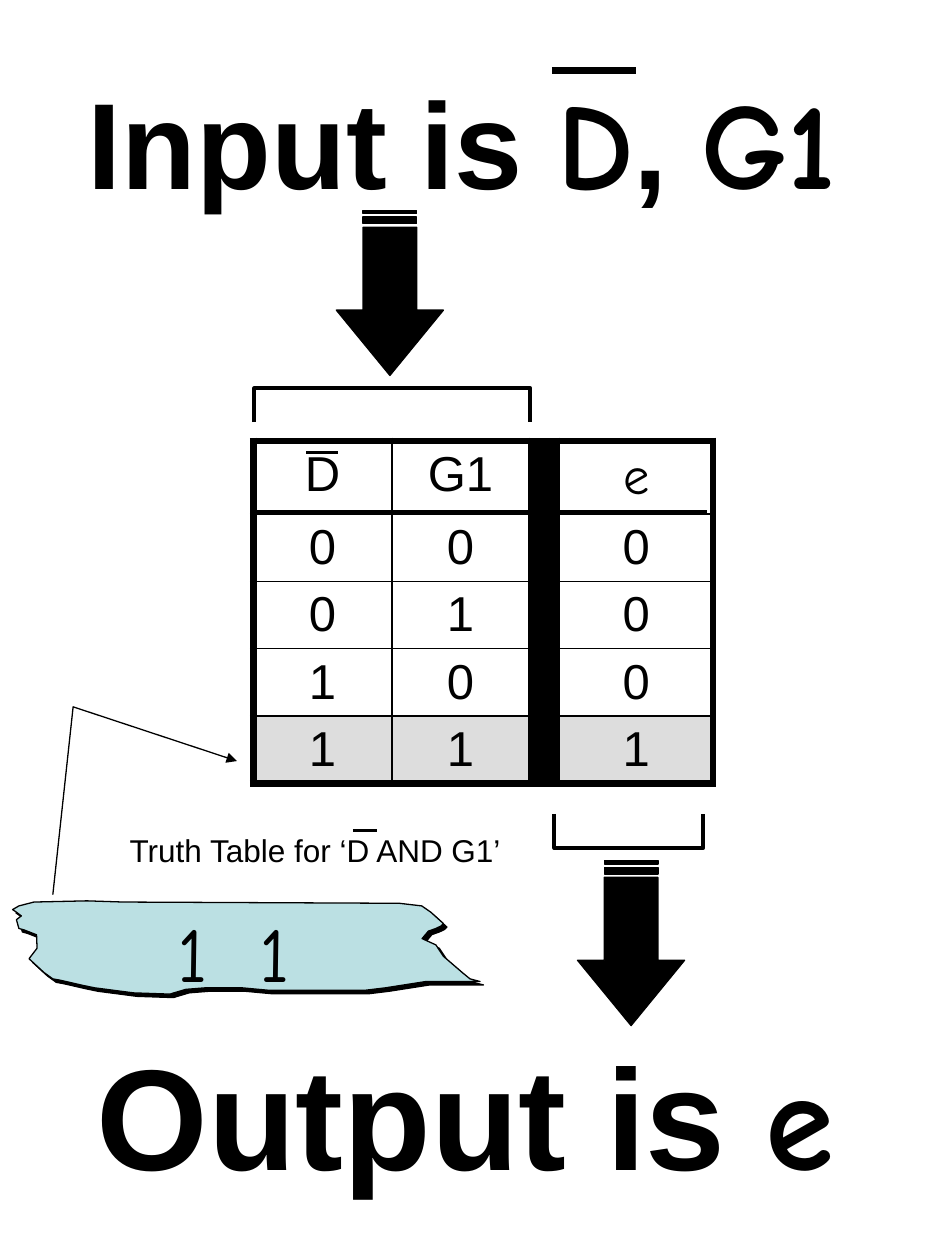
from lxml.etree import SubElement
from pptx import Presentation
from pptx.dml.color import RGBColor as Rgb
from pptx.enum.shapes import MSO_CONNECTOR as Link, MSO_SHAPE as Preset
from pptx.enum.text import MSO_AUTO_SIZE as Fit, PP_ALIGN as Align
from pptx.oxml.ns import qn
from pptx.util import Pt

COLORS = {"ink": "000000", "paper": "BBE0E3", "match": "DDDDDD"}
SANS, HAND = "Arial", "Comic Neue"

TRUTH_ROWS = [
    ("D", "G1", "", "e"),
    ("0", "0", "", "0"),
    ("0", "1", "", "0"),
    ("1", "0", "", "0"),
    ("1", "1", "", "1"),
]
TABLE_LEFT, TABLE_TOP = 144.7, 252
COLUMN_WIDTHS = (79.2, 78.5, 16.6, 87.8)
HEADER_HEIGHT, ROW_HEIGHT = 41.7, 38.5
DIVIDER = 2
THICK, THIN = 4.5, 1

CAPTIONS = [
    ((67, 471.6, 230.4, 28.8), [("Truth Table for ‘D AND G1’", SANS, 18, False)]),
    ((43.2, 34.6, 463, 91.4), [("Input is ", SANS, 70, True), ("D", HAND, 70, True),
                               (", ", SANS, 70, True), ("G1", HAND, 70, True)]),
    ((48.2, 583.2, 442, 105.8), [("Output is ", SANS, 82, True), ("e", HAND, 80, True)]),
]
PAPER_CAPTION = ((94.3, 514.1, 79.9, 59.8), [("1  1", HAND, 44, False)])

ARROW_CENTERS = [(222.8, 167.4), (360.6, 538.9)]
ARROW_LENGTH, ARROW_WIDTH = 94.3, 61.2

BRACKETS = [
    [(145.4, 241.2), (145.4, 221.8), (303.1, 221.8), (303.1, 241.2)],
    [(316.8, 465.1), (316.8, 484.6), (401.8, 484.6), (401.8, 465.1)],
]
RULES = [
    (144.7, 403.9, 293, 3),
    (315.4, 363.6, 40.3, 4.5),
    (175, 193, 258.5, 1.5),
    (201.6, 215.3, 474.5, 1.5),
]
POINTER = [(30.2, 511.2), (41.8, 403.9), (135.4, 434.9)]
TORN_PAPER = [
    (9.4, 525.6), (10.8, 530.6), (13.7, 531.4), (20.9, 534.2), (21.2, 541.9),
    (16.6, 547.9), (25.2, 555.8), (30.2, 559.4), (34.6, 560.2), (46.8, 563),
    (54, 564.5), (76.3, 567.4), (97.2, 568.1), (99.4, 567.4), (106.2, 565.4),
    (117.4, 564.5), (138.2, 564.5), (153.4, 565.9), (208.8, 565.9), (220.3, 564.5),
    (243.4, 560.9), (264.2, 560.9), (274.3, 560.9), (268.6, 559.4), (264.2, 555.8),
    (253.4, 546.5), (249.1, 540), (241.2, 536.4), (244.8, 532.1), (249.1, 530.6),
    (252, 529.2), (253.4, 527.8), (246.2, 521.3), (241, 517.7), (228.2, 516.2),
    (70.6, 515.5), (49.7, 514.8), (19.4, 515.5), (10.8, 517.7), (7.2, 519.8),
    (9.4, 521.3), (12.2, 523.4),
]


def apply(target, **values):
    for name, value in values.items():
        setattr(target, name, value)


def paint(fill, color):
    if color:
        fill.solid()
        fill.fore_color.rgb = Rgb.from_string(COLORS[color])
    else:
        fill.background()


def outline(part, width):
    paint(part.line.fill, "ink")
    part.line.width = Pt(width)


def write(paragraph, text, font, size, bold=False):
    run = paragraph.add_run()
    run.text = text
    apply(run.font, name=font, size=Pt(size), bold=bold)
    paint(run.font.fill, "ink")


def add_caption(shapes, box, runs):
    caption = shapes.add_textbox(*map(Pt, box))
    apply(caption.text_frame, word_wrap=False, auto_size=Fit.SHAPE_TO_FIT_TEXT)
    for run in runs:
        write(caption.text_frame.paragraphs[0], *run)


def add_outline(shapes, points, width, fill=None, close=False):
    (x, y), *rest = [(Pt(px), Pt(py)) for px, py in points]
    builder = shapes.build_freeform(x, y)
    builder.add_line_segments(rest, close=close)
    part = builder.convert_to_shape()
    part.shadow.inherit = False
    paint(part.fill, fill)
    outline(part, width)
    return part


def add_border(cell, side, width):
    border = SubElement(cell._tc.get_or_add_tcPr(), qn(f"a:ln{side}"), w=str(Pt(width)))
    fill = SubElement(border, qn("a:solidFill"))
    SubElement(fill, qn("a:srgbClr"), val=COLORS["ink"])


def add_truth_table(shapes):
    heights = [HEADER_HEIGHT] + [ROW_HEIGHT] * (len(TRUTH_ROWS) - 1)
    last_row, last_column = len(heights) - 1, len(COLUMN_WIDTHS) - 1
    frame = shapes.add_table(len(heights), len(COLUMN_WIDTHS), Pt(TABLE_LEFT), Pt(TABLE_TOP),
                             Pt(sum(COLUMN_WIDTHS)), Pt(sum(heights)))
    table = frame.table
    apply(table, first_row=False, horz_banding=False)
    for column, width in zip(table.columns, COLUMN_WIDTHS):
        column.width = Pt(width)
    for r, (height, texts) in enumerate(zip(heights, TRUTH_ROWS)):
        table.rows[r].height = Pt(height)
        for c, text in enumerate(texts):
            cell = table.cell(r, c)
            apply(cell, margin_top=Pt(3.6), margin_bottom=Pt(2.6))
            outer = {"L": c == 0, "R": c == last_column, "T": r == 0, "B": r == last_row}
            for side, is_outer in outer.items():
                add_border(cell, side, THICK if is_outer else THIN)
            paint(cell.fill, "ink" if c == DIVIDER else "match" if r == last_row else None)
            if text:
                paragraph = cell.text_frame.paragraphs[0]
                paragraph.alignment = Align.CENTER
                write(paragraph, text, *((HAND, 30) if text == "e" else (SANS, 28)))


def add_arrow(shapes, x, y):
    arrow = shapes.add_shape(Preset.STRIPED_RIGHT_ARROW, Pt(x - ARROW_LENGTH / 2),
                             Pt(y - ARROW_WIDTH / 2), Pt(ARROW_LENGTH), Pt(ARROW_WIDTH))
    arrow.rotation = 90
    arrow.adjustments[0], arrow.adjustments[1] = 0.5, 0.61
    arrow.shadow.inherit = False
    paint(arrow.fill, "ink")
    outline(arrow, 0.75)


def add_rule(shapes, left, right, y, width):
    rule = shapes.add_connector(Link.STRAIGHT, Pt(left), Pt(y), Pt(right), Pt(y))
    outline(rule, width)
    SubElement(rule._element.spPr, qn("a:effectLst"))


def add_paper(shapes):
    paper = add_outline(shapes, TORN_PAPER, 0.75, "paper", close=True)
    effects = paper._element.spPr.find(qn("a:effectLst"))
    shadow = SubElement(effects, qn("a:outerShdw"), dist=str(Pt(2.8)), dir="2700000",
                        algn="ctr", rotWithShape="0")
    SubElement(shadow, qn("a:srgbClr"), val=COLORS["ink"])


def main():
    deck = Presentation()
    apply(deck, slide_width=Pt(540), slide_height=Pt(720))
    shapes = deck.slides.add_slide(deck.slide_layouts[6]).shapes
    add_truth_table(shapes)
    for caption in CAPTIONS:
        add_caption(shapes, *caption)
    for center in ARROW_CENTERS:
        add_arrow(shapes, *center)
    for bracket in BRACKETS:
        add_outline(shapes, bracket, 2.25)
    for rule in RULES:
        add_rule(shapes, *rule)
    add_paper(shapes)
    add_caption(shapes, *PAPER_CAPTION)
    pointer = add_outline(shapes, POINTER, 0.75)
    SubElement(pointer.line._get_or_add_ln(), qn("a:tailEnd"), type="triangle")
    deck.save("out.pptx")


if __name__ == "__main__":
    main()
